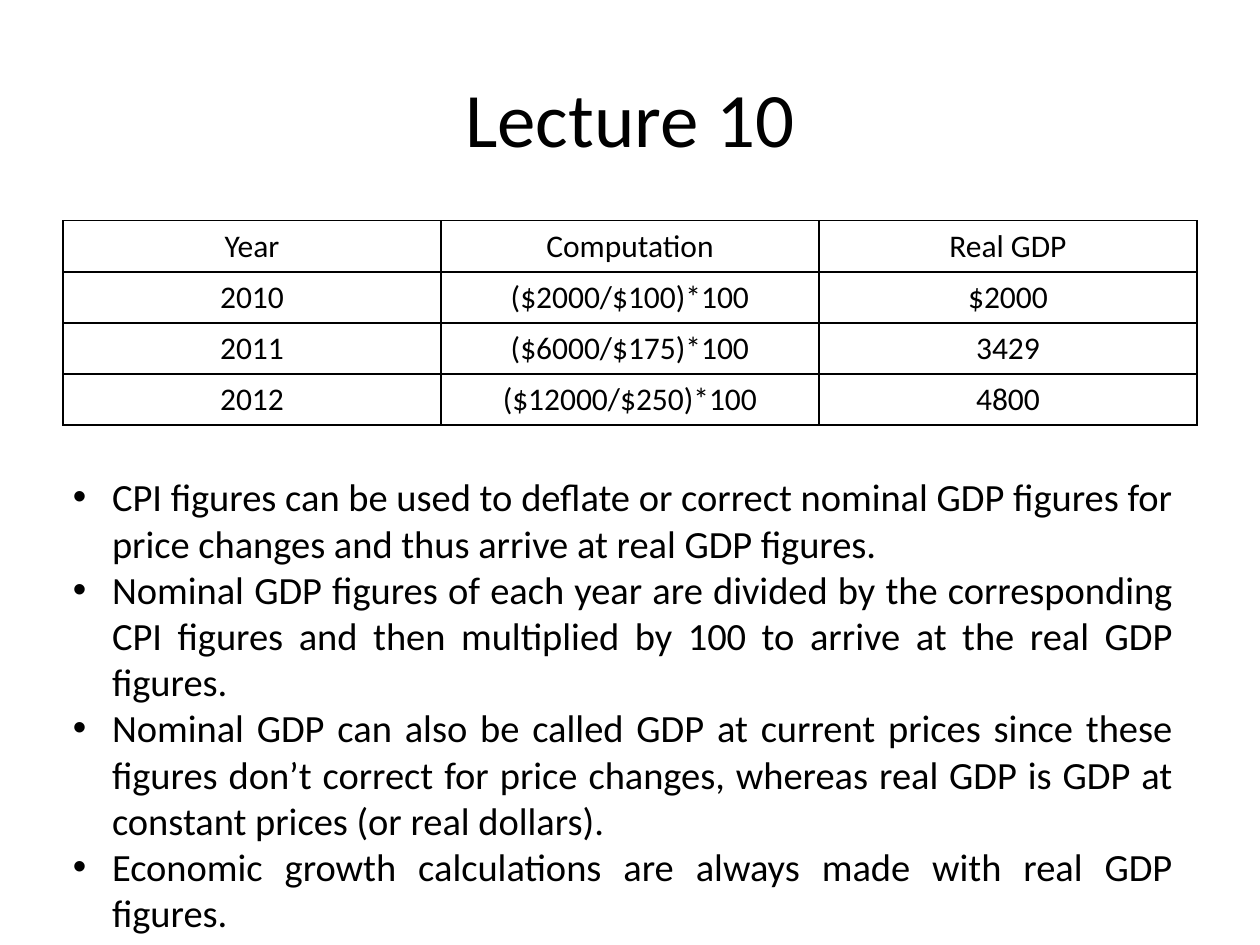
from dataclasses import dataclass

from lxml import etree
from pptx import Presentation
from pptx.dml.color import RGBColor
from pptx.enum.text import MSO_ANCHOR, PP_ALIGN
from pptx.oxml.ns import qn
from pptx.util import Cm, Pt

CENTER, JUSTIFY = PP_ALIGN.CENTER, PP_ALIGN.JUSTIFY
TOP, MIDDLE = MSO_ANCHOR.TOP, MSO_ANCHOR.MIDDLE
FONT = "Calibri"
COLORS = {"ink": "000000", "paper": "FFFFFF"}
TITLE_ONLY = 5


@dataclass
class Area:
    left: float
    top: float
    width: float
    height: float

    def lengths(self) -> tuple:
        return Cm(self.left), Cm(self.top), Cm(self.width), Cm(self.height)


TITLE_AREA = Area(1.27, 0.76, 22.86, 3.18)
TABLE_AREA = Area(1.27, 4.45, 22.86, 4.12)
BULLET_AREA = Area(1.22, 9.42, 22.68, 11.2)
BULLET_INDENT = Cm(0.79)

GDP_ROWS = [
    ("Year", "Computation", "Real GDP"),
    ("2010", "($2000/$100)*100", "$2000"),
    ("2011", "($6000/$175)*100", "3429"),
    ("2012", "($12000/$250)*100", "4800"),
]
BULLETS = [
    "CPI figures can be used to deflate or correct nominal GDP figures for "
    "price changes and thus arrive at real GDP figures. ",
    "Nominal GDP figures of each year are divided by the corresponding CPI "
    "figures and then multiplied by 100 to arrive at the real GDP figures.",
    "Nominal GDP can also be called GDP at current prices since these figures "
    "don’t correct for price changes, whereas real GDP is GDP at constant "
    "prices (or real dollars). ",
    "Economic growth calculations are always made with real GDP figures.",
]


def write(para, text: str, size: int, align) -> None:
    para.alignment = align
    span = para.add_run()
    span.text = text
    span.font.name = FONT
    span.font.size = Pt(size)
    span.font.color.rgb = RGBColor.from_string(COLORS["ink"])


def add_borders(cell) -> None:
    properties = cell._tc.get_or_add_tcPr()
    for position, side in enumerate(("a:lnL", "a:lnR", "a:lnT", "a:lnB")):
        line = etree.Element(qn(side), w=str(Pt(1)))
        fill = etree.SubElement(line, qn("a:solidFill"))
        etree.SubElement(fill, qn("a:srgbClr"), val=COLORS["ink"])
        properties.insert(position, line)


def add_title(slide, text: str) -> None:
    title = slide.shapes.title
    title.left, title.top, title.width, title.height = TITLE_AREA.lengths()
    title.text_frame.vertical_anchor = MIDDLE
    write(title.text_frame.paragraphs[0], text, 44, CENTER)


def add_gdp_table(slide, rows: list) -> None:
    frame = slide.shapes.add_table(len(rows), len(rows[0]), *TABLE_AREA.lengths())
    for row, texts in zip(frame.table.rows, rows):
        for cell, text in zip(row.cells, texts):
            cell.fill.solid()
            cell.fill.fore_color.rgb = RGBColor.from_string(COLORS["paper"])
            cell.vertical_anchor = TOP
            write(cell.text_frame.paragraphs[0], text, 18, CENTER)
            add_borders(cell)


def add_bullets(slide, texts: list) -> None:
    box = slide.shapes.add_textbox(*BULLET_AREA.lengths())
    frame = box.text_frame
    frame.word_wrap = True
    for number, text in enumerate(texts):
        para = frame.add_paragraph() if number else frame.paragraphs[0]
        write(para, text, 22, JUSTIFY)
        properties = para._p.get_or_add_pPr()
        properties.set("marL", str(BULLET_INDENT))
        properties.set("indent", str(-BULLET_INDENT))
        etree.SubElement(properties, qn("a:buFont"), typeface="Arial")
        etree.SubElement(properties, qn("a:buChar"), char="•")


def main() -> None:
    deck = Presentation()
    deck.slide_width, deck.slide_height = Cm(25.4), Cm(19.05)
    page = deck.slides.add_slide(deck.slide_layouts[TITLE_ONLY])

    # Heading, computed figures, explanation
    add_title(page, "Lecture 10")
    add_gdp_table(page, GDP_ROWS)
    add_bullets(page, BULLETS)

    deck.save("out.pptx")


if __name__ == "__main__":
    main()
